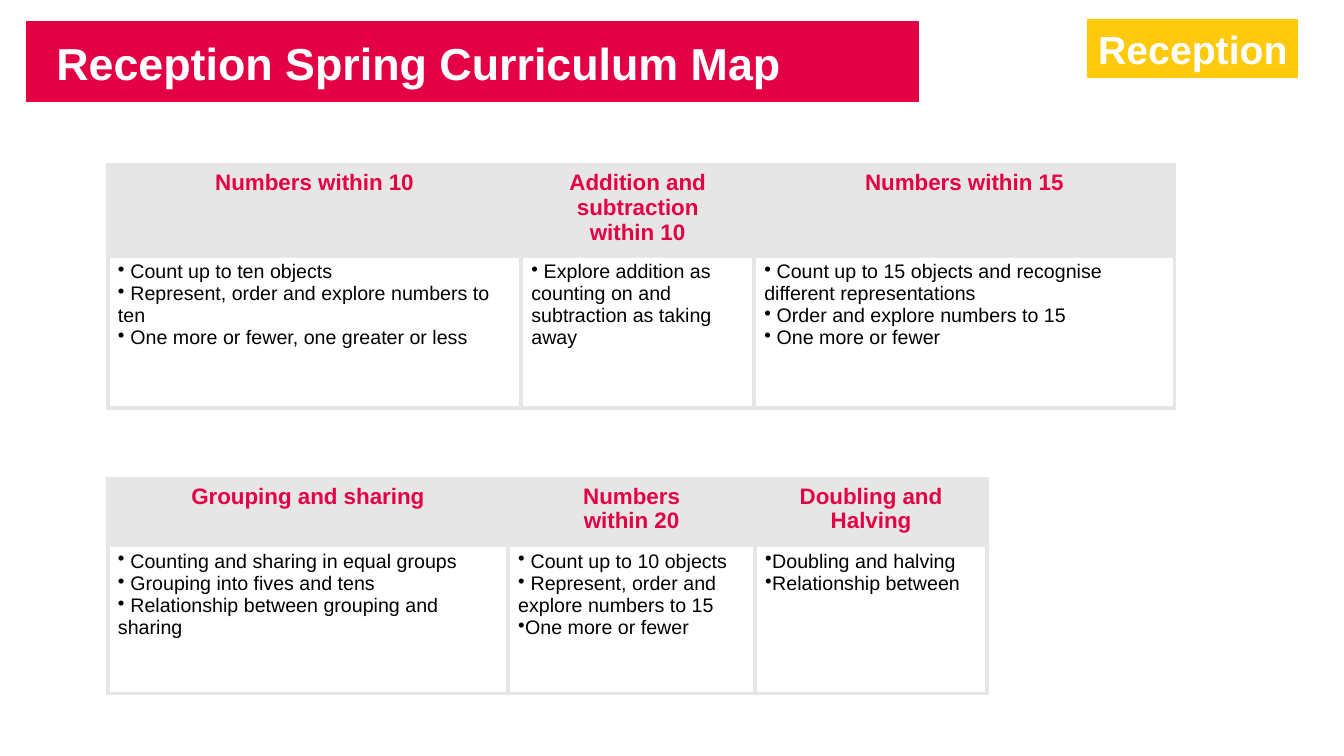
from pptx import Presentation
from pptx.dml.color import RGBColor as Rgb
from pptx.enum.shapes import MSO_SHAPE as Shape
from pptx.enum.text import PP_ALIGN as Align
from pptx.oxml import parse_xml
from pptx.oxml.ns import nsdecls
from pptx.util import Pt

PX = 9144  # 100 px to the inch
INK = {"red": "E40045", "gold": "FFC90D", "grey": "E6E6E6",
       "white": "FFFFFF", "black": "000000"}

AUTUMN = [
    (410, ["Numbers within 10"],
     [" Count up to ten objects",
      " Represent, order and explore numbers to ten",
      " One more or fewer, one greater or less"]),
    (231, ["Addition and", "subtraction", "within 10"],
     [" Explore addition as counting on and subtraction as taking away"]),
    (417, ["Numbers within 15"],
     [" Count up to 15 objects and recognise different representations",
      " Order and explore numbers to 15",
      " One more or fewer"]),
]
SPRING = [
    (397, ["Grouping and sharing"],
     [" Counting and sharing in equal groups",
      " Grouping into fives and tens",
      " Relationship between grouping and sharing"]),
    (245, ["Numbers", "within 20"],
     [" Count up to 10 objects",
      " Represent, order and explore numbers to 15",
      "One more or fewer"]),
    (230, ["Doubling and", "Halving"],
     ["Doubling and halving", "Relationship between"]),
]


def rgb(name):
    return Rgb.from_string(INK[name])


def px(*nums):
    return [n * PX for n in nums]


def put(frame, lines, size, ink, bold=True, align=Align.LEFT, dots=False):
    """Fill a text frame with one paragraph per line."""
    for i, line in enumerate(lines):
        par = frame.add_paragraph() if i else frame.paragraphs[0]
        par.alignment = align
        run = par.add_run()
        run.text = line
        font = run.font
        font.name, font.size, font.bold = "Arial", Pt(size), bold
        font.color.rgb = rgb(ink)
        if dots:
            props = par._p.get_or_add_pPr()
            props.set("marL", "0")
            props.set("indent", "0")
            props.append(parse_xml(f'<a:buChar {nsdecls("a")} char="•"/>'))


def block(slide, box, ink):
    rect = slide.shapes.add_shape(Shape.RECTANGLE, *px(*box))
    rect.shadow.inherit = False
    rect.fill.solid()
    rect.fill.fore_color.rgb = rgb(ink)
    rect.line.color.rgb = rgb(ink)
    rect.line.width = Pt(1)
    return rect


def banner(slide, box, title):
    x, y, w, h = box
    block(slide, box, "red")
    text = slide.shapes.add_textbox(*px(x + 20, y + 9, w - 140, h - 15))
    text.text_frame.word_wrap = False
    put(text.text_frame, [title], 32, "white")


def badge(slide, box, label):
    frame = block(slide, box, "gold").text_frame
    frame.word_wrap = False
    put(frame, [label], 28, "white", align=Align.CENTER)


def edge(cell):
    """Draw the grey border on all four sides of a cell."""
    props = cell._tc.get_or_add_tcPr()
    for side in "LRTB":
        props.append(parse_xml(
            f'<a:ln{side} {nsdecls("a")} w="{Pt(3)}"><a:solidFill>'
            f'<a:srgbClr val="{INK["grey"]}"/></a:solidFill></a:ln{side}>'))


def units(slide, x, y, rows, cols):
    """Place a table of units: a heading over bullets in each column."""
    wide = sum(col[0] for col in cols)
    grid = slide.shapes.add_table(
        2, len(cols), *px(x, y, wide, sum(rows))).table
    grid.first_row = grid.horz_banding = False
    for row, high in zip(grid.rows, rows):
        row.height = high * PX
    for i, (width, heads, points) in enumerate(cols):
        grid.columns[i].width = width * PX
        head, body = grid.cell(0, i), grid.cell(1, i)
        edge(head)
        edge(body)
        head.fill.solid()
        head.fill.fore_color.rgb = rgb("grey")
        body.fill.background()
        put(head.text_frame, heads, 16, "red", align=Align.CENTER)
        put(body.text_frame, points, 14, "black", bold=False, dots=True)


def main():
    deck = Presentation()
    deck.slide_width, deck.slide_height = px(1333, 750)
    slide = deck.slides.add_slide(deck.slide_layouts[6])
    banner(slide, (26, 22, 885, 79), "Reception Spring Curriculum Map")
    badge(slide, (1079, 20, 208, 57), "Reception")
    units(slide, 107, 164, (76, 151), AUTUMN)
    units(slide, 107, 475, (66, 147), SPRING)
    deck.save("out.pptx")


if __name__ == "__main__":
    main()
